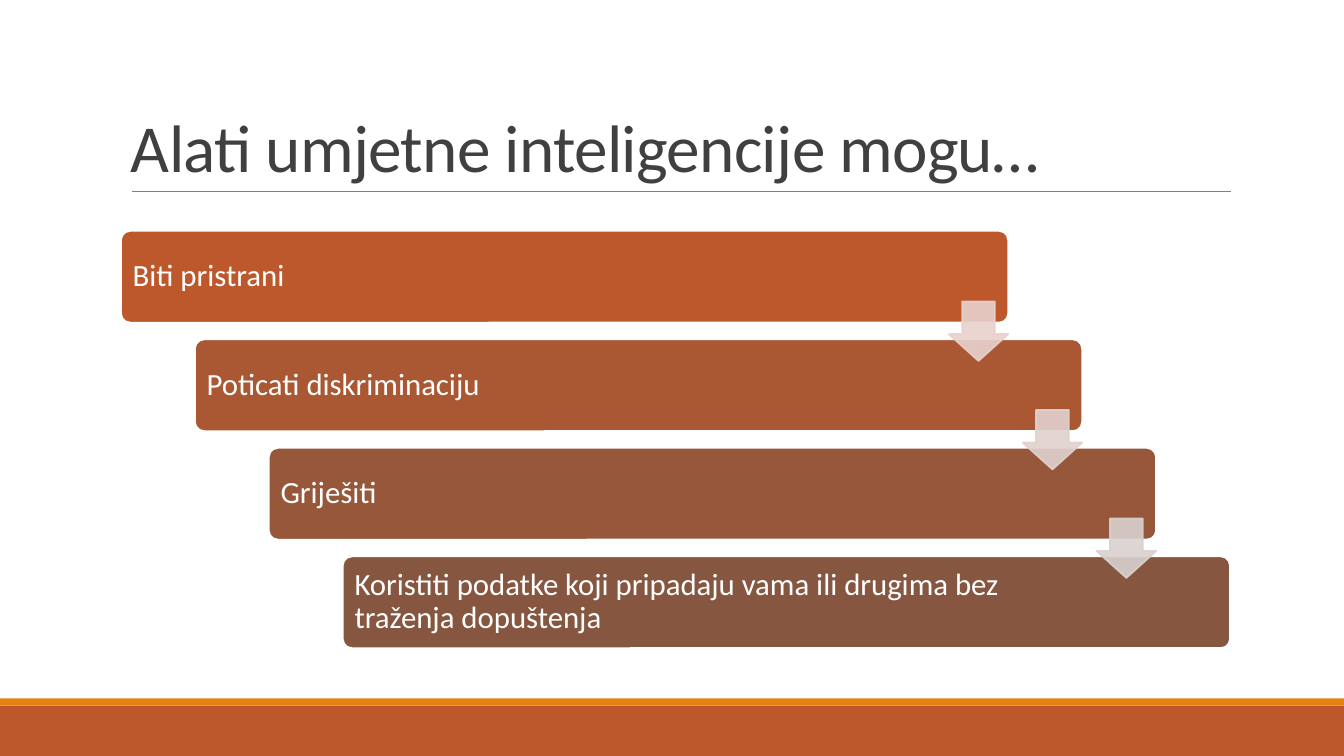
from lxml import etree
from pptx import Presentation
from pptx.dml.color import RGBColor
from pptx.enum.shapes import MSO_CONNECTOR, MSO_SHAPE
from pptx.enum.text import MSO_ANCHOR, PP_ALIGN
from pptx.oxml.ns import qn
from pptx.util import Inches, Pt

RECT, ROUND = MSO_SHAPE.RECTANGLE, MSO_SHAPE.ROUNDED_RECTANGLE
DOWN, LINE = MSO_SHAPE.DOWN_ARROW, MSO_CONNECTOR.STRAIGHT
LEFT, MID, BASE = PP_ALIGN.LEFT, MSO_ANCHOR.MIDDLE, MSO_ANCHOR.BOTTOM

WHITE = RGBColor(0xFF, 0xFF, 0xFF)
DARK = RGBColor(0x40, 0x40, 0x40)
GRAY = RGBColor(0x80, 0x80, 0x80)
RUST = RGBColor(0xBD, 0x58, 0x2C)
AMBER = RGBColor(0xE4, 0x83, 0x12)

WIDE, HIGH = 13.33, 7.5
FONT = "Calibri"
STEPS = [
    ("Biti pristrani", RUST),
    ("Poticati diskriminaciju", RGBColor(0xAA, 0x58, 0x34)),
    ("Griješiti", RGBColor(0x97, 0x57, 0x3A)),
    ("Koristiti podatke koji pripadaju vama ili drugima bez traženja dopuštenja",
     RGBColor(0x86, 0x56, 0x40)),
]
ARROWS = [RGBColor(0xE8, 0xD1, 0xCD), RGBColor(0xE1, 0xD1, 0xCE),
          RGBColor(0xD9, 0xD1, 0xCF)]


def add_form(slide, kind, box, fill, edge=None, adjust=()):
    """Add a flat preset shape with an optional outline."""
    form = slide.shapes.add_shape(kind, *map(Inches, box))
    form.shadow.inherit = False
    form.fill.solid()
    form.fill.fore_color.rgb = fill
    if edge is None:
        form.line.fill.background()
    else:
        form.line.color.rgb = edge
        form.line.width = Pt(1.25)
    for i, value in enumerate(adjust):
        form.adjustments[i] = value
    return form


def add_words(form, words, size, color, anchor, pads, space):
    """Write one left-aligned paragraph into a shape."""
    frame = form.text_frame
    frame.word_wrap = True
    frame.vertical_anchor = anchor
    frame.margin_left, frame.margin_top, frame.margin_right, frame.margin_bottom = (
        map(Inches, pads))
    para = frame.paragraphs[0]
    para.alignment = LEFT
    para.line_spacing = space
    run = para.add_run()
    run.text = words
    run.font.name = FONT
    run.font.size = Pt(size)
    run.font.color.rgb = color
    return run


def fade(form, share):
    """Make the fill and outline of a shape partly opaque."""
    for color in form._element.spPr.iter(qn("a:srgbClr")):
        etree.SubElement(color, qn("a:alpha")).set("val", str(share * 1000))


def add_head(slide, box):
    """Place the title and the rule below it."""
    x, y, w, h = box
    form = slide.shapes.add_textbox(*map(Inches, box))
    run = add_words(form, "Alati umjetne inteligencije mogu…", 48, DARK, BASE,
                    (0.1, 0.05, 0.1, 0.05), 0.85)
    run._r.get_or_add_rPr().set("spc", "-50")
    ends = (x + 0.11, y + h, x + w + 0.01, y + h)
    rule = slide.shapes.add_connector(LINE, *map(Inches, ends))
    rule.line.color.rgb = GRAY
    rule.line.width = Pt(0.5)
    etree.SubElement(rule._element.spPr, qn("a:effectLst"))


def add_stairs(slide, box):
    """Place the steps down a diagonal, joined by arrows."""
    x, y, w, h = box
    wide, high, side = w * 0.8, h * 0.22, 0.59
    dx = (w - wide) / (len(STEPS) - 1)
    dy = (h - high) / (len(STEPS) - 1)
    for i, (words, fill) in enumerate(STEPS):
        step = add_form(slide, ROUND, (x + i * dx, y + i * dy, wide, high),
                        fill, WHITE, (0.1,))
        add_words(step, words, 22, WHITE, MID, (0.09, 0.09, 1.41, 0.09), 0.9)
    for i, fill in enumerate(ARROWS):
        place = (x + i * dx + wide - side, y + i * dy + 0.7, side, side)
        fade(add_form(slide, DOWN, place, fill, fill, (0.55, 0.45)), 90)


def add_foot(slide, box):
    """Place the footer band with its thin top stripe."""
    x, y, w, h = box
    thin = 0.07
    add_form(slide, RECT, (x, y + thin, w, h - thin), RUST)
    add_form(slide, RECT, (x, y, w, thin), AMBER)


def main():
    """Build and save the slide."""
    deck = Presentation()
    deck.slide_width, deck.slide_height = Inches(WIDE), Inches(HIGH)
    slide = deck.slides.add_slide(deck.slide_layouts[6])
    add_foot(slide, (0, HIGH - 0.57, WIDE, 0.57))
    add_head(slide, (1.2, 0.31, 11, 1.59))
    add_stairs(slide, (1.2, 2.29, 11, 4.14))
    deck.save("out.pptx")


if __name__ == "__main__":
    main()
